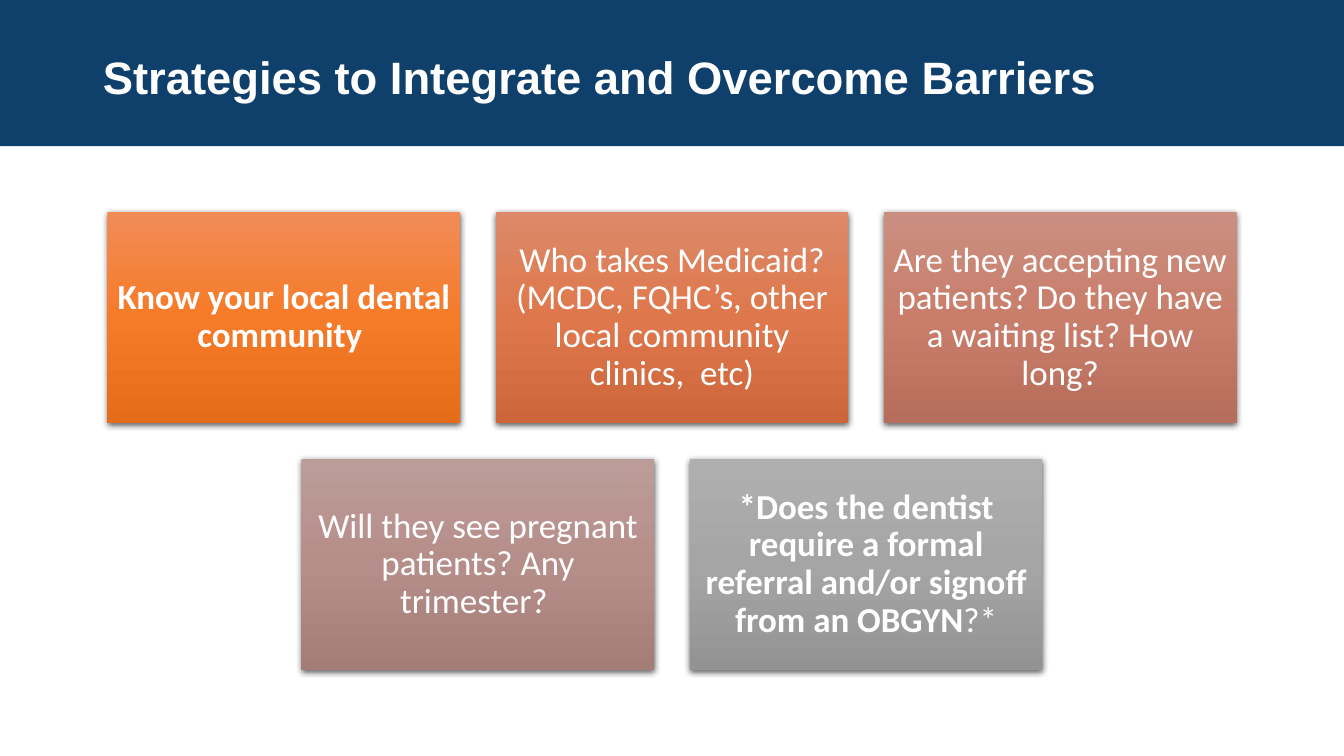
from copy import deepcopy
from dataclasses import dataclass

from lxml.etree import SubElement
from pptx import Presentation
from pptx.dml.color import RGBColor
from pptx.enum.shapes import MSO_SHAPE
from pptx.enum.text import MSO_ANCHOR, MSO_AUTO_SIZE, PP_ALIGN
from pptx.oxml.ns import qn
from pptx.util import Inches, Pt


@dataclass(frozen=True)
class Theme:
    band: str = "0F406B"
    text: str = "FFFFFF"
    shadow: str = "000000"
    gradients: tuple = (
        ("F18C57", "F67B28", "E56C19"),
        ("DD8A6A", "DE774B", "CD673B"),
        ("CB8F81", "C97E6B", "B76D5B"),
        ("BC9C99", "B68E89", "A47C78"),
        ("AFAFAF", "A5A5A5", "939393"),
    )
    title_font: str = "Arial"
    card_font: str = "Calibri"
    title_size: float = 32.4
    card_size: float = 25


class StrategyPage:
    def __init__(self, deck, theme):
        self.theme = theme
        self.page = deck.slides.add_slide(deck.slide_layouts[5])

    def span(self, para, words, font, size, bold):
        span = para.add_run()
        span.text = words
        span.font.name = font
        span.font.size = Pt(size)
        span.font.bold = bold
        span.font.color.rgb = RGBColor.from_string(self.theme.text)

    def rectangle(self, left, top, width, height):
        box = self.page.shapes.add_shape(
            MSO_SHAPE.RECTANGLE, Inches(left), Inches(top), Inches(width), Inches(height)
        )
        box.shadow.inherit = False
        box.line.fill.background()
        return box

    def band(self, width, height):
        box = self.rectangle(0, 0, width, height)
        box.fill.solid()
        box.fill.fore_color.rgb = RGBColor.from_string(self.theme.band)
        self.page.shapes.title.element.addprevious(box.element)

    def title(self, words, left, top, width, height):
        box = self.page.shapes.title
        box.left, box.top = Inches(left), Inches(top)
        box.width, box.height = Inches(width), Inches(height)
        frame = box.text_frame
        frame.word_wrap = True
        frame.auto_size = MSO_AUTO_SIZE.NONE
        frame.vertical_anchor = MSO_ANCHOR.MIDDLE
        para = frame.paragraphs[0]
        para.alignment = PP_ALIGN.LEFT
        para.line_spacing = 0.9
        self.span(para, words, self.theme.title_font, self.theme.title_size, True)

    def gradient(self, box, colours):
        box.fill.gradient()
        box.fill.gradient_angle = 270
        first = box.element.spPr.find(".//" + qn("a:gs"))
        first.addnext(deepcopy(first))
        for stop, position, colour in zip(box.fill.gradient_stops, (0, 0.5, 1), colours):
            stop.position = position
            stop.color.rgb = RGBColor.from_string(colour)

    def drop_shadow(self, box):
        effects = box.element.spPr.find(qn("a:effectLst"))
        shadow = SubElement(
            effects, qn("a:outerShdw"), blurRad=str(Pt(4.5)), dist=str(Pt(1.5)),
            dir="5400000", algn="ctr", rotWithShape="0",
        )
        colour = SubElement(shadow, qn("a:srgbClr"), val=self.theme.shadow)
        SubElement(colour, qn("a:alpha"), val="63000")

    def card(self, left, top, width, height, colours, spans):
        box = self.rectangle(left, top, width, height)
        self.gradient(box, colours)
        self.drop_shadow(box)
        frame = box.text_frame
        frame.word_wrap = True
        frame.vertical_anchor = MSO_ANCHOR.MIDDLE
        frame.margin_left = frame.margin_right = Inches(0.1)
        frame.margin_top = frame.margin_bottom = Inches(0.1)
        para = frame.paragraphs[0]
        para.alignment = PP_ALIGN.CENTER
        para.line_spacing = 0.9
        for words, bold in spans:
            self.span(para, words, self.theme.card_font, self.theme.card_size, bold)


QUESTIONS = (
    [("Know your local dental community ", True)],
    [("Who takes Medicaid? (MCDC, FQHC’s, other local community clinics,  etc)", False)],
    [("Are they accepting new patients? Do they have a waiting list? How long?", False)],
    [("Will they see pregnant patients? Any trimester? ", False)],
    [
        ("*Does the dentist require a formal referral and/or signoff from an OBGYN", True),
        ("?*", False),
    ],
)


def main():
    slide_width = 13.33
    card_width, card_height, gap = 3.5, 2.1, 0.35
    first_top, columns = 2.1, 3

    deck = Presentation()
    deck.slide_width, deck.slide_height = Inches(slide_width), Inches(7.5)
    theme = Theme()
    page = StrategyPage(deck, theme)
    page.band(slide_width, 1.45)
    page.title("Strategies to Integrate and Overcome Barriers", 0.92, 0.21, 10.13, 1.17)

    for index, spans in enumerate(QUESTIONS):
        row, column = divmod(index, columns)
        count = min(columns, len(QUESTIONS) - row * columns)
        row_width = count * card_width + (count - 1) * gap
        left = (slide_width - row_width) / 2 + column * (card_width + gap)
        top = first_top + row * (card_height + gap)
        page.card(left, top, card_width, card_height, theme.gradients[index], spans)

    deck.save("out.pptx")


if __name__ == "__main__":
    main()
